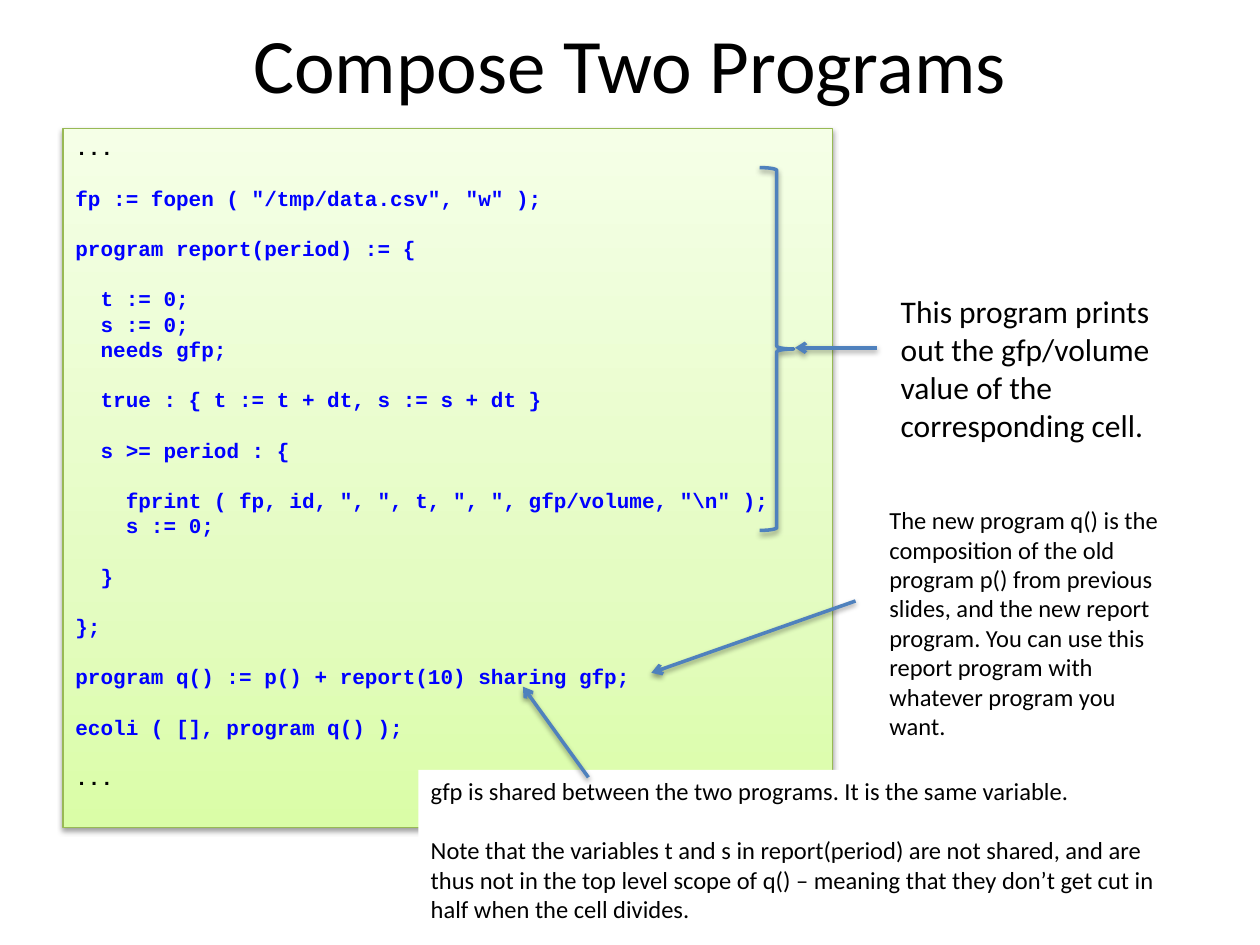
from copy import deepcopy
from dataclasses import dataclass

from lxml import etree
from pptx import Presentation
from pptx.dml.color import RGBColor
from pptx.enum.shapes import MSO_CONNECTOR, MSO_SHAPE
from pptx.enum.text import MSO_ANCHOR, PP_ALIGN
from pptx.oxml.ns import qn
from pptx.util import Inches, Pt


@dataclass(frozen=True)
class Theme:
    text_font: str = "Calibri"
    code_font: str = "Courier New"
    title_size: float = 44
    callout_size: float = 18
    note_size: float = 14
    code_size: float = 12
    code_pitch: float = 14.4
    note_pitch: float = 17
    ink: str = "000000"
    code: str = "0000FF"
    accent: str = "4F81BD"
    accent_width: float = 2
    panel_line: str = "98B955"
    panel_stops: tuple = ((0, "DAFDA7"), (0.35, "E4FCC2"), (1, "F5FFE7"))
    paper: str = "FFFFFF"


def rgb(value):
    return RGBColor.from_string(value)


class SlideBuilder:
    def __init__(self, slide, theme):
        self.slide = slide
        self.theme = theme

    def title(self, text, box):
        sp = self.slide.shapes.title
        sp.left, sp.top, sp.width, sp.height = map(Inches, box)
        tf = sp.text_frame
        tf.vertical_anchor = MSO_ANCHOR.MIDDLE
        tf.text = text
        p = tf.paragraphs[0]
        p.alignment = PP_ALIGN.CENTER
        self._font(p, self.theme.title_size)

    def code_panel(self, lines, box):
        """Lines are (indent level, blank lines before, text)."""
        th = self.theme
        sp = self._shape(MSO_SHAPE.RECTANGLE, box)
        self._panel_gradient(sp)
        self._line(sp, th.panel_line, 0.75)
        self._shadow(sp)
        tf = sp.text_frame
        tf.word_wrap = True
        tf.vertical_anchor = MSO_ANCHOR.TOP
        for i, (level, gap, text) in enumerate(lines):
            p = tf.paragraphs[0] if i == 0 else tf.add_paragraph()
            p.text = text
            p.alignment = PP_ALIGN.LEFT
            p.line_spacing = Pt(th.code_pitch)
            p.space_before = Pt(gap * th.code_pitch)
            p._p.get_or_add_pPr().set("marL", str(Inches(0.2 * level)))
            color = th.ink if text == "..." else th.code
            self._font(p, th.code_size, color, th.code_font, True)

    def brace(self, box):
        sp = self._shape(MSO_SHAPE.RIGHT_BRACE, box)
        sp.fill.background()
        self._line(sp, self.theme.accent, self.theme.accent_width)
        self._shadow(sp)

    def text(self, text, box, size):
        sp = self.slide.shapes.add_textbox(*map(Inches, box))
        self._fill_text(sp, [text], size)

    def note(self, paragraphs, box):
        sp = self._shape(MSO_SHAPE.RECTANGLE, box)
        sp.shadow.inherit = False
        sp.fill.solid()
        sp.fill.fore_color.rgb = rgb(self.theme.paper)
        sp.line.fill.background()
        self._fill_text(sp, paragraphs, self.theme.note_size)

    def arrow(self, start, end):
        cxn = self.slide.shapes.add_connector(
            MSO_CONNECTOR.STRAIGHT, *map(Inches, start + end))
        self._line(cxn, self.theme.accent, self.theme.accent_width)
        ln = cxn.line._get_or_add_ln()
        etree.SubElement(ln, qn("a:tailEnd"), type="arrow")
        self._shadow(cxn)

    def _shape(self, kind, box):
        return self.slide.shapes.add_shape(kind, *map(Inches, box))

    def _fill_text(self, sp, paragraphs, size):
        tf = sp.text_frame
        tf.word_wrap = True
        tf.vertical_anchor = MSO_ANCHOR.TOP
        for i, text in enumerate(paragraphs):
            p = tf.paragraphs[0] if i == 0 else tf.add_paragraph()
            p.text = text
            p.alignment = PP_ALIGN.LEFT
            if i:
                p.space_before = Pt(self.theme.note_pitch)
            self._font(p, size)

    def _font(self, p, size, color=None, name=None, bold=False):
        p.font.size = Pt(size)
        p.font.name = name or self.theme.text_font
        p.font.bold = bold
        p.font.color.rgb = rgb(color or self.theme.ink)

    def _line(self, sp, color, width):
        sp.line.color.rgb = rgb(color)
        sp.line.width = Pt(width)

    def _panel_gradient(self, sp):
        sp.fill.gradient()
        sp.fill.gradient_angle = 90
        stops = sp._element.spPr.find(".//" + qn("a:gsLst"))
        stops.append(deepcopy(stops[-1]))
        for stop, (position, color) in zip(sp.fill.gradient_stops, self.theme.panel_stops):
            stop.position = position
            stop.color.rgb = rgb(color)

    def _shadow(self, sp):
        """Add a soft shadow below; the line must be set already."""
        effects = etree.SubElement(sp._element.spPr, qn("a:effectLst"))
        shadow = etree.SubElement(
            effects, qn("a:outerShdw"), blurRad=str(Pt(3.1)), dist=str(Pt(1.6)),
            dir="5400000", rotWithShape="0")
        color = etree.SubElement(shadow, qn("a:srgbClr"), val=self.theme.ink)
        etree.SubElement(color, qn("a:alpha"), val="38000")


CODE = [
    (0, 0, "..."),
    (0, 1, 'fp := fopen ( "/tmp/data.csv", "w" );'),
    (0, 1, "program report(period) := {"),
    (1, 1, "t := 0;"),
    (1, 0, "s := 0;"),
    (1, 0, "needs gfp;"),
    (1, 1, "true : { t := t + dt, s := s + dt }"),
    (1, 1, "s >= period : {"),
    (2, 1, r'fprint ( fp, id, ", ", t, ", ", gfp/volume, "\n" );'),
    (2, 0, "s := 0;"),
    (1, 1, "}"),
    (0, 1, "};"),
    (0, 1, "program q() := p() + report(10) sharing gfp;"),
    (0, 1, "ecoli ( [], program q() );"),
    (0, 1, "..."),
]


def main():
    prs = Presentation()
    prs.slide_width, prs.slide_height = Inches(10), Inches(7.5)
    theme = Theme()
    s = SlideBuilder(prs.slides.add_slide(prs.slide_layouts[5]), theme)

    s.title("Compose Two Programs", (0.5, -0.13, 9, 1.25))
    s.code_panel(CODE, (0.5, 1.02, 6.11, 5.55))
    s.brace((6.03, 1.33, 0.27, 2.88))
    s.text("This program prints out the gfp/volume value of the corresponding cell.",
           (7.05, 2.27, 2.45, 1.31), theme.callout_size)
    s.text("The new program q() is the composition of the old program p() from "
           "previous slides, and the new report program. You can use this report "
           "program with whatever program you want.",
           (6.96, 3.96, 2.41, 1.99), theme.note_size)
    s.arrow((6.79, 4.77), (5.17, 5.34))
    s.note(["gfp is shared between the two programs. It is the same variable.",
            "Note that the variables t and s in report(period) are not shared, and "
            "are thus not in the top level scope of q() – meaning that they don’t "
            "get cut in half when the cell divides."],
           (3.32, 6.11, 5.98, 1.28))
    s.arrow((4.67, 6.17), (4.15, 5.45))
    s.arrow((6.96, 2.76), (6.31, 2.76))

    prs.save("out.pptx")


if __name__ == "__main__":
    main()
